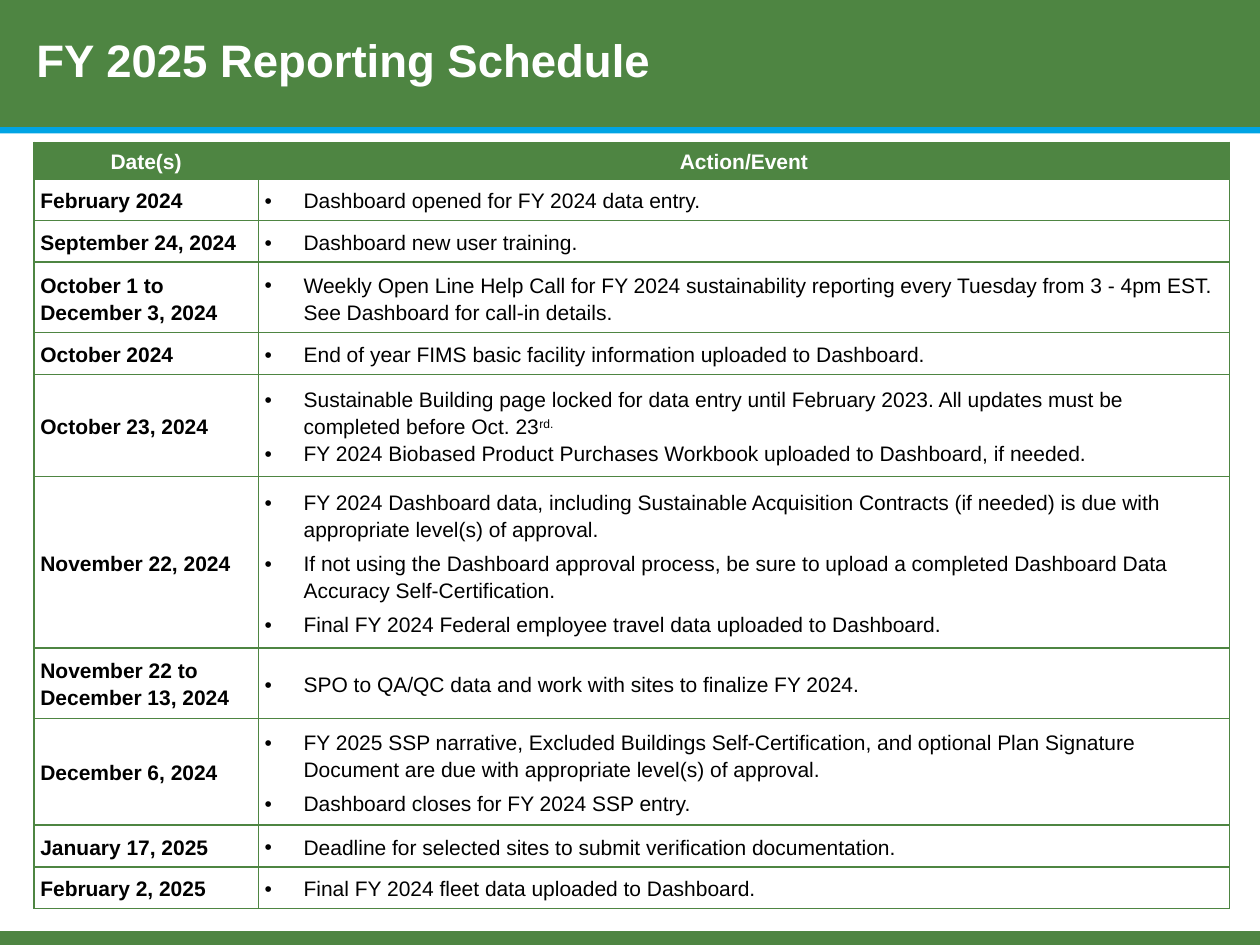
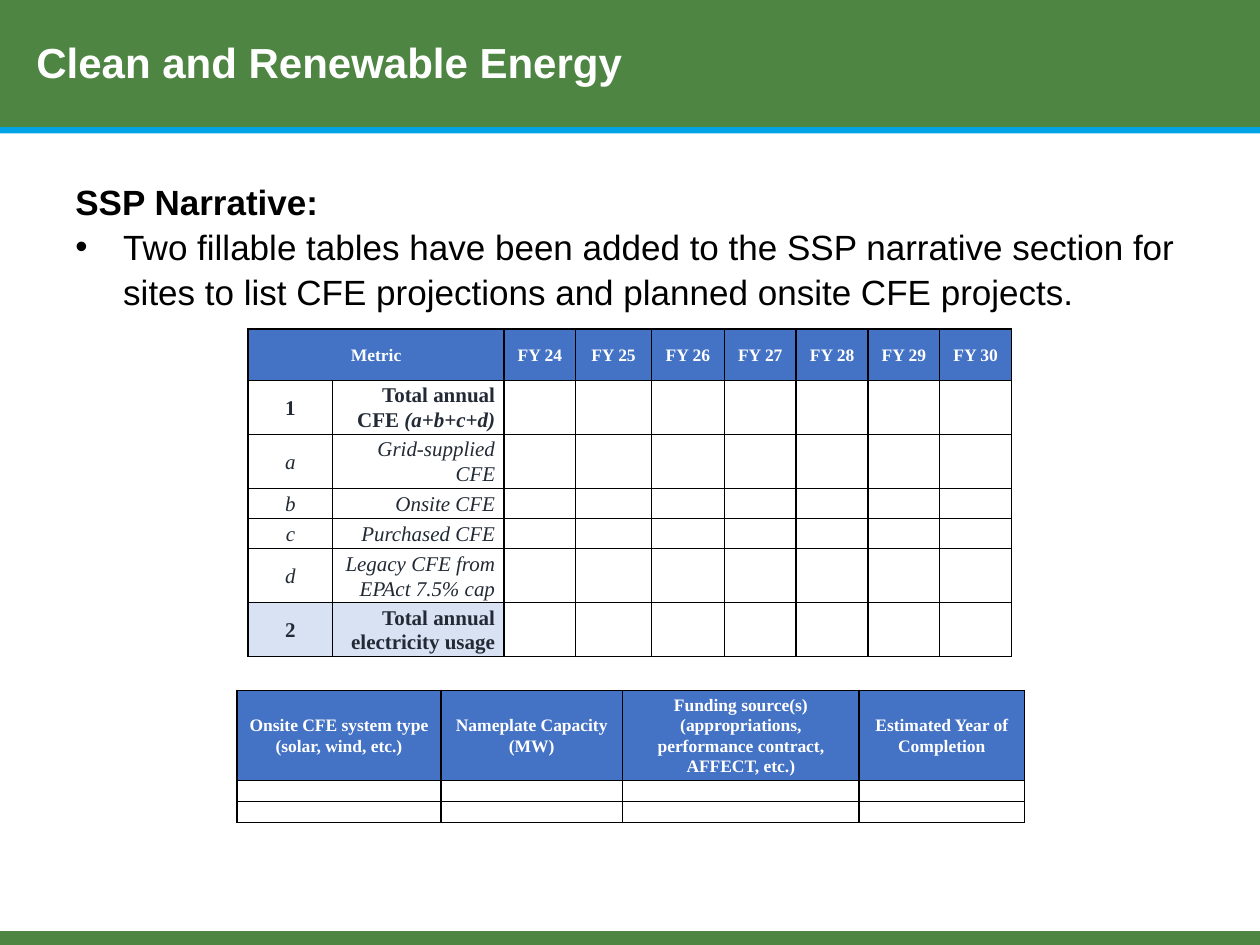
from lxml.etree import SubElement as Sub
from pptx import Presentation
from pptx.dml.color import RGBColor
from pptx.enum.shapes import MSO_SHAPE as Shape
from pptx.enum.text import MSO_ANCHOR as Anchor, PP_ALIGN as Align
from pptx.oxml.ns import qn
from pptx.util import Inches, Pt

GREEN, SKY, WHITE, BLACK = "4E8542", "00A4E4", "FFFFFF", "000000"
BLUE, PALE, INK = "4472C4", "D9E2F3", "222A35"
SANS, SERIF = "Arial", "Times New Roman"
hue = RGBColor.from_string


def write(par, text, size, face=SANS, color=BLACK, bold=False, slant=False,
          align=Align.LEFT, lead=1.15, hang=0):
    """Fill a paragraph; hang is the bullet indent in inches."""
    if hang:
        props = par._p.get_or_add_pPr()
        props.set("marL", str(Inches(hang)))
        props.set("indent", str(-Inches(hang)))
        Sub(props, qn("a:buFont"), typeface=SANS)
        Sub(props, qn("a:buChar"), char="•")
    par.alignment, par.line_spacing = align, lead
    font = par.font
    font.size, font.name, font.bold, font.italic = Pt(size), face, bold, slant
    font.color.rgb = hue(color)
    if text:
        par.add_run().text = text
    else:
        Sub(par._p, qn("a:endParaRPr"), sz=str(size * 100))


def grid(slide, left, top, cols, rows, edge, pad):
    """Add a plain ruled table; pad is the side and the top inset."""
    frame = slide.shapes.add_table(len(rows), len(cols), Inches(left), Inches(top),
                                   Inches(sum(cols)), Inches(sum(rows)))
    table = frame.table
    table.first_row = table.horz_banding = False
    for col, width in zip(table.columns, cols):
        col.width = Inches(width)
    for row, height in zip(table.rows, rows):
        row.height = Inches(height)
    for cell in table.iter_cells():
        cell.margin_left = cell.margin_right = Inches(pad[0])
        cell.margin_top = cell.margin_bottom = Inches(pad[1])
        cell.vertical_anchor = Anchor.MIDDLE
        props = cell._tc.get_or_add_tcPr()
        for side in ("lnL", "lnR", "lnT", "lnB"):
            line = Sub(props, qn(f"a:{side}"), w=str(Pt(1)))
            Sub(Sub(line, qn("a:solidFill")), qn("a:srgbClr"), val=edge)
        cell.fill.background()
    return table


deck = Presentation()
deck.slide_width, deck.slide_height = Inches(10), Inches(7.5)

# Bands and titles on both slides
pages = []
for title, size in [("FY 2025 Reporting Schedule", 26),
                    ("Clean and Renewable Energy", 24)]:
    page = deck.slides.add_slide(deck.slide_layouts[6])
    for top, height, color in [(0, 1.01, GREEN), (7.39, 0.11, GREEN), (1.01, 0.05, SKY)]:
        band = page.shapes.add_shape(Shape.RECTANGLE, 0, Inches(top),
                                     Inches(10), Inches(height))
        band.shadow.inherit = False
        band.fill.solid()
        band.fill.fore_color.rgb = hue(color)
        band.line.fill.background()
    frame = page.shapes.add_textbox(Inches(0.19), 0, Inches(7.39), Inches(0.99)).text_frame
    frame.word_wrap = True
    frame.vertical_anchor = Anchor.MIDDLE
    write(frame.paragraphs[0], title, size, color=WHITE, bold=True, lead=Pt(28))
    pages.append(page)
plan, energy = pages

# Schedule: date, row height, gap around bullets in points, events
dates = [
    ("February 2024", 0.32, 0, ["Dashboard opened for FY 2024 data entry."]),
    ("September 24, 2024", 0.32, 0, ["Dashboard new user training."]),
    ("October 1 to December 3, 2024", 0.56, 0, [
        "Weekly Open Line Help Call for FY 2024 sustainability reporting every Tuesday "
        "from 3 - 4pm EST. See Dashboard for call-in details."]),
    ("October 2024", 0.32, 0, [
        "End of year FIMS basic facility information uploaded to Dashboard."]),
    ("October 23, 2024", 0.81, 0, [
        "Sustainable Building page locked for data entry until February 2023. "
        "All updates must be completed before Oct. 23",
        "FY 2024 Biobased Product Purchases Workbook uploaded to Dashboard, if needed."]),
    ("November 22, 2024", 1.35, 2, [
        "FY 2024 Dashboard data, including Sustainable Acquisition Contracts (if needed) "
        "is due with appropriate level(s) of approval.",
        "If not using the Dashboard approval process, be sure to upload a completed "
        "Dashboard Data Accuracy Self-Certification.",
        "Final FY 2024 Federal employee travel data uploaded to Dashboard."]),
    ("November 22 to December 13, 2024", 0.56, 0, [
        "SPO to QA/QC data and work with sites to finalize FY 2024."]),
    ("December 6, 2024", 0.84, 2, [
        "FY 2025 SSP narrative, Excluded Buildings Self-Certification, and optional Plan "
        "Signature Document are due with appropriate level(s) of approval.",
        "Dashboard closes for FY 2024 SSP entry."]),
    ("January 17, 2025", 0.32, 0, [
        "Deadline for selected sites to submit verification documentation."]),
    ("February 2, 2025", 0.32, 0, ["Final FY 2024 fleet data uploaded to Dashboard."]),
]
table = grid(plan, 0.27, 1.13, [1.78, 7.71], [0.29] + [row[1] for row in dates],
             GREEN, (0.05, 0.05))
for col, head in enumerate(["Date(s)", "Action/Event"]):
    cell = table.cell(0, col)
    cell.margin_top = cell.margin_bottom = 0
    cell.fill.solid()
    cell.fill.fore_color.rgb = hue(GREEN)
    write(cell.text_frame.paragraphs[0], head, 12, color=WHITE, bold=True,
          align=Align.CENTER)
for row, (date, height, gap, events) in enumerate(dates, 1):
    write(table.cell(row, 0).text_frame.paragraphs[0], date, 12, bold=True)
    frame = table.cell(row, 1).text_frame
    for num, event in enumerate(events):
        par = frame.add_paragraph() if num else frame.paragraphs[0]
        write(par, event, 12, hang=0.31)
        par.space_before = Pt(gap if num else 0)
        par.space_after = Pt(gap)
        if event.endswith("Oct. 23"):
            run = par.add_run()
            run.text = "rd."
            run._r.get_or_add_rPr().set("baseline", "30000")

# Narrative text
frame = energy.shapes.add_textbox(Inches(0.5), Inches(1.36), Inches(9), Inches(1.2)).text_frame
frame.word_wrap = True
write(frame.paragraphs[0], "SSP Narrative:", 20, bold=True, lead=1.07)
write(frame.add_paragraph(),
      "Two fillable tables have been added to the SSP narrative section for sites to list "
      "CFE projections and planned onsite CFE projects.", 20, lead=1.07, hang=0.38)

# Projection table
items = [("1", "Total annual CFE "), ("a", "Grid-supplied CFE"), ("b", "Onsite CFE"),
         ("c", "Purchased CFE"), ("d", "Legacy CFE from EPAct 7.5% cap"),
         ("2", "Total annual electricity usage")]
goals = grid(energy, 1.97, 2.61, [0.67, 1.36, 0.57, 0.6, 0.58] + [0.57] * 4,
             [0.41, 0.4, 0.4, 0.24, 0.24, 0.41, 0.4], BLACK, (0.07, 0))
goals.cell(0, 0).merge(goals.cell(0, 1))
for row, (mark, name) in enumerate(items, 1):
    total = mark.isdigit()
    for col, (text, align) in enumerate([(mark, Align.CENTER), (name, Align.RIGHT)]):
        cell = goals.cell(row, col)
        par = cell.text_frame.paragraphs[0]
        write(par, text, 12, SERIF, INK, total, not total, align, 1.07)
        if mark == "2":
            cell.fill.solid()
            cell.fill.fore_color.rgb = hue(PALE)
    if mark == "1":
        run = par.add_run()
        run.text = "(a+b+c+d)"
        run.font.italic = True

# Project table
works = grid(energy, 1.88, 5.48, [1.62, 1.44, 1.88, 1.31], [0.65, 0.16, 0.16],
             BLACK, (0.07, 0))

# Blue heads and blank cells of both tables
years = ["Metric", ""] + [f"FY {year}" for year in range(24, 31)]
kinds = ["Onsite CFE system type (solar, wind, etc.)", "Nameplate Capacity (MW)",
         "Funding source(s) (appropriations, performance contract, AFFECT, etc.)",
         "Estimated Year of Completion"]
for table, heads in [(goals, years), (works, kinds)]:
    for col, head in enumerate(heads):
        cell = table.cell(0, col)
        cell.fill.solid()
        cell.fill.fore_color.rgb = hue(BLUE)
        write(cell.text_frame.paragraphs[0], head, 10, SERIF, WHITE, True,
              align=Align.CENTER, lead=1.07)
    for cell in table.iter_cells():
        if not cell.text and not cell.is_spanned:
            write(cell.text_frame.paragraphs[0], "", 10, SERIF, lead=1)

deck.save("out.pptx")
